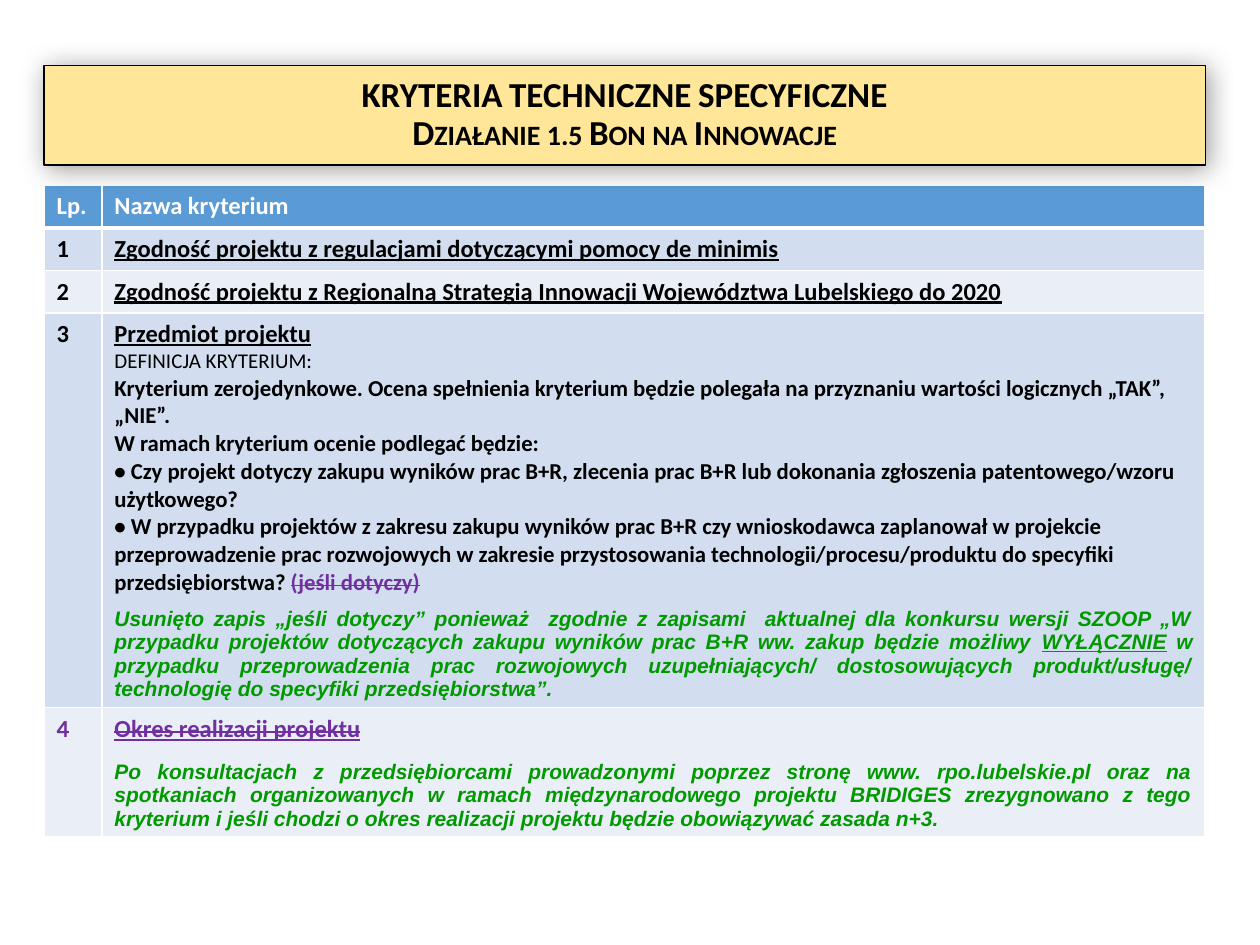
from dataclasses import dataclass, replace
from lxml import etree
from pptx import Presentation
from pptx import util as u
from pptx.dml import color
from pptx.enum import shapes, text
from pptx.oxml import ns

Pt = u.Pt
BLACK, WHITE, PURPLE, GREEN = "000000", "FFFFFF", "7030A0", "009900"
BANDS = ("D2DEEF", "EAEFF7")
LEFT, WIDTH = 25.2, 663.5
NUMBER_WIDTH = 33
ROW_HEIGHTS = (24.5, 24, 24, 225.5, 73.5)


@dataclass(frozen=True)
class Style:
    size: float = 14
    color: str = BLACK
    font: str = "Calibri"
    bold: bool = True
    italic: bool = False
    underline: bool = False
    strike: bool = False
    small_caps: bool = False


@dataclass(frozen=True)
class Run:
    text: str
    style: Style


@dataclass(frozen=True)
class Para:
    runs: tuple[Run, ...]
    align: text.PP_ALIGN = text.PP_ALIGN.LEFT
    before: float = 0
    spacing: float = 1


def rgb(value: str) -> color.RGBColor:
    return color.RGBColor.from_string(value)


def para(content: str, style: Style) -> Para:
    return Para((Run(content, style),))


def note(before: float, *runs: Run) -> Para:
    return Para(runs, text.PP_ALIGN.JUSTIFY, before)


def write(tf, paras: tuple[Para, ...]) -> None:
    for i, item in enumerate(paras):
        p = tf.add_paragraph() if i else tf.paragraphs[0]
        p.alignment = item.align
        p.line_spacing = item.spacing
        if item.before:
            p.space_before = Pt(item.before)
        for run in item.runs:
            r = p.add_run()
            r.text = run.text
            st, f = run.style, r.font
            f.size, f.name = Pt(st.size), st.font
            f.bold, f.italic, f.underline = st.bold, st.italic, st.underline
            f.color.rgb = rgb(st.color)
            if st.strike:
                r._r.get_or_add_rPr().set("strike", "sngStrike")
            if st.small_caps:
                r._r.get_or_add_rPr().set("cap", "small")


def add_borders(cell, top: float, bottom: float) -> None:
    tc_pr = cell._tc.get_or_add_tcPr()
    for side, width in (("L", 1), ("R", 1), ("T", top), ("B", bottom)):
        ln = etree.SubElement(tc_pr, ns.qn(f"a:ln{side}"), w=str(Pt(width)))
        fill = etree.SubElement(ln, ns.qn("a:solidFill"))
        etree.SubElement(fill, ns.qn("a:srgbClr"), val=WHITE)


def add_criteria(s, rows: tuple) -> None:
    frame = s.shapes.add_table(len(rows), 2, Pt(LEFT), Pt(105.8), Pt(WIDTH), Pt(sum(ROW_HEIGHTS)))
    table = frame.table
    table.columns[0].width = Pt(NUMBER_WIDTH)
    table.columns[1].width = Pt(WIDTH - NUMBER_WIDTH)
    for i, (row, height) in enumerate(zip(rows, ROW_HEIGHTS)):
        table.rows[i].height = Pt(height)
        for j, paras in enumerate(row):
            cell = table.cell(i, j)
            add_borders(cell, 3 if i == 1 else 1, 3 if i == 0 else 1)
            cell.fill.solid()
            cell.fill.fore_color.rgb = rgb(BANDS[(i - 1) % 2] if i else "5B9BD5")
            write(cell.text_frame, paras)


def add_glow_shadow(sp, blur: float, distance: float) -> None:
    effects = etree.SubElement(sp._element.spPr, ns.qn("a:effectLst"))
    shadow = etree.SubElement(
        effects, ns.qn("a:outerShdw"), blurRad=str(Pt(blur)), dist=str(Pt(distance)),
        dir="2700000", algn="ctr", rotWithShape="0")
    tint = etree.SubElement(shadow, ns.qn("a:srgbClr"), val=BLACK)
    etree.SubElement(tint, ns.qn("a:alpha"), val="40000")


def add_title(s, lines: tuple[str, ...]) -> None:
    sp = s.shapes.add_shape(shapes.MSO_SHAPE.RECTANGLE, Pt(LEFT), Pt(37.4), Pt(WIDTH), Pt(56.9))
    sp.fill.solid()
    sp.fill.fore_color.rgb = rgb("FFE699")
    sp.line.color.rgb = rgb(BLACK)
    sp.line.width = Pt(0.75)
    add_glow_shadow(sp, 15, 2)
    tf = sp.text_frame
    tf.word_wrap = True
    tf.vertical_anchor = text.MSO_ANCHOR.MIDDLE
    style = Style(20, small_caps=True)
    write(tf, tuple(Para((Run(line, style),), text.PP_ALIGN.CENTER, spacing=0.9) for line in lines))


def main() -> None:
    prs = Presentation()
    prs.slide_width, prs.slide_height = Pt(720), Pt(540)
    s = prs.slides.add_slide(prs.slide_layouts[6])

    header = Style(color=WHITE)
    number = Style()
    name = Style(underline=True)
    removed = Style(color=PURPLE, strike=True)
    body = Style(13)
    comment = Style(12, GREEN, "Arial", italic=True)

    subject = (
        para("Przedmiot projektu", name),
        para("DEFINICJA KRYTERIUM:", Style(12, bold=False)),
        para("Kryterium zerojedynkowe. Ocena spełnienia kryterium będzie polegała na przyznaniu wartości logicznych „TAK”, „NIE”.", body),
        para("W ramach kryterium ocenie podlegać będzie:", body),
        para("• Czy projekt dotyczy zakupu wyników prac B+R, zlecenia prac B+R lub dokonania zgłoszenia patentowego/wzoru użytkowego?", body),
        Para((
            Run("• W przypadku projektów z zakresu zakupu wyników prac B+R czy wnioskodawca zaplanował w projekcie przeprowadzenie prac rozwojowych w zakresie przystosowania technologii/procesu/produktu do specyfiki przedsiębiorstwa? ", body),
            Run("(jeśli dotyczy)", replace(removed, size=13)),
        )),
        note(
            6,
            Run("Usunięto zapis „jeśli dotyczy” ponieważ  zgodnie z zapisami  aktualnej dla konkursu wersji SZOOP „W przypadku projektów dotyczących zakupu wyników prac B+R ww. zakup będzie możliwy ", comment),
            Run("WYŁĄCZNIE", replace(comment, underline=True)),
            Run(" w przypadku przeprowadzenia prac rozwojowych uzupełniających/ dostosowujących produkt/usługę/ technologię do specyfiki przedsiębiorstwa”.", comment),
        ),
    )
    period = (
        para("Okres realizacji projektu", replace(removed, underline=True)),
        note(9.3, Run("Po konsultacjach z przedsiębiorcami prowadzonymi poprzez stronę www. rpo.lubelskie.pl oraz na spotkaniach organizowanych w ramach międzynarodowego projektu BRIDIGES zrezygnowano z tego kryterium i jeśli chodzi o okres realizacji projektu będzie obowiązywać zasada n+3.", comment)),
    )
    add_criteria(s, (
        ((para("Lp.", header),), (para("Nazwa kryterium", header),)),
        ((para("1", number),), (para("Zgodność projektu z regulacjami dotyczącymi pomocy de minimis", name),)),
        ((para("2", number),), (para("Zgodność projektu z Regionalną Strategią Innowacji Województwa Lubelskiego do 2020", name),)),
        ((para("3", number),), subject),
        ((para("4", removed),), period),
    ))
    add_title(s, ("KRYTERIA TECHNICZNE SPECYFICZNE", "Działanie 1.5 Bon na Innowacje"))
    prs.save("out.pptx")


if __name__ == "__main__":
    main()
